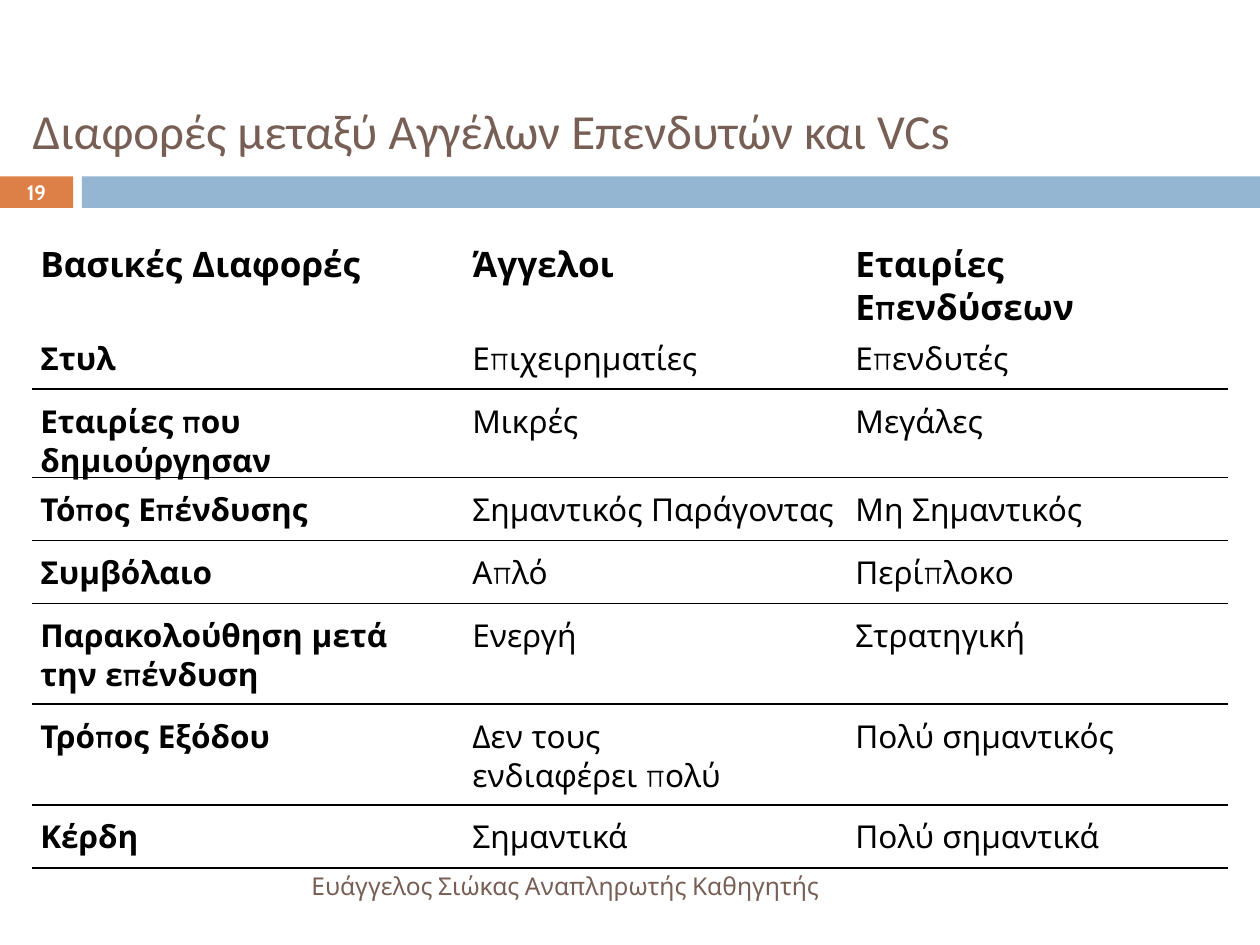
from lxml import etree
from pptx import Presentation
from pptx.dml.color import RGBColor
from pptx.enum.shapes import MSO_SHAPE
from pptx.enum.text import MSO_ANCHOR, PP_ALIGN
from pptx.oxml.ns import qn
from pptx.util import Inches, Pt

RECT = MSO_SHAPE.RECTANGLE
MIDDLE = MSO_ANCHOR.MIDDLE
LEFT, CENTER, RIGHT = PP_ALIGN.LEFT, PP_ALIGN.CENTER, PP_ALIGN.RIGHT
BROWN, BLACK, WHITE = "775F55", "000000", "FFFFFF"


def paint(code):
    return RGBColor.from_string(code)


def write(frame, text, size, font, color, bold=False, align=LEFT):
    frame.word_wrap = True
    para = frame.paragraphs[0]
    para.alignment = align
    run = para.add_run()
    run.text = text
    run.font.size = Pt(size)
    run.font.name = font
    run.font.bold = bold
    run.font.color.rgb = paint(color)


deck = Presentation()
deck.slide_width, deck.slide_height = Inches(10), Inches(7.5)
slide = deck.slides.add_slide(deck.slide_layouts[6])
shapes = slide.shapes

for left, width, color in [(0, 0.58, "DD8047"), (0.65, 9.35, "94B6D2")]:
    bar = shapes.add_shape(RECT, Inches(left), Inches(1.4), Inches(width), Inches(0.25))
    bar.shadow.inherit = False
    bar.fill.solid()
    bar.fill.fore_color.rgb = paint(color)
    bar.line.fill.background()

title = shapes.add_textbox(Inches(0.25), Inches(0.78), Inches(9.5), Inches(0.49)).text_frame
title.margin_left = title.margin_top = Inches(0.01)
title.margin_right = title.margin_bottom = 0
title.vertical_anchor = MIDDLE
write(title, "Διαφορές μεταξύ Αγγέλων Επενδυτών και VCs", 28, "Calibri", BROWN)

rows = [
    ("Βασικές Διαφορές", "Άγγελοι", "Εταιρίες Επενδύσεων"),
    ("Στυλ", "Επιχειρηματίες", "Επενδυτές"),
    ("Εταιρίες που δημιούργησαν", "Μικρές", "Μεγάλες"),
    ("Τόπος Επένδυσης", "Σημαντικός Παράγοντας", "Μη Σημαντικός"),
    ("Συμβόλαιο", "Απλό", "Περίπλοκο"),
    ("Παρακολούθηση μετά την επένδυση", "Ενεργή", "Στρατηγική"),
    ("Τρόπος Εξόδου", "Δεν τους ενδιαφέρει πολύ", "Πολύ σημαντικός"),
    ("Κέρδη", "Σημαντικά", "Πολύ σημαντικά"),
]
widths = [3.38, 3.04, 3.08]
heights = [0.44, 0.5, 0.5, 0.5, 0.5, 0.8, 0.8, 0.5]
insets = {(0, 2): 0.5, (5, 0): 0.4, (6, 1): 0.8}

table = shapes.add_table(len(rows), len(widths), Inches(0.25), Inches(1.92),
                         Inches(sum(widths)), Inches(sum(heights))).table
table.first_row = table.horz_banding = False
for col, width in zip(table.columns, widths):
    col.width = Inches(width)
for row, height in zip(table.rows, heights):
    row.height = Inches(height)

for r, texts in enumerate(rows):
    for c, text in enumerate(texts):
        cell = table.cell(r, c)
        cell.margin_left = Inches(0.12 if c else 0.07)
        cell.margin_top = Inches(0.1 if r else 0)
        cell.margin_right = Inches(insets.get((r, c), 0))
        cell.margin_bottom = 0
        write(cell.text_frame, text, 18 if r else 20, "Quicksand", BLACK,
              bold=r == 0 or c == 0)
        cell.fill.background()
        props = cell._tc.get_or_add_tcPr()
        edges = [("a:lnL", False), ("a:lnR", False), ("a:lnT", r > 1), ("a:lnB", r > 0)]
        for place, (tag, drawn) in enumerate(edges):
            edge = etree.Element(qn(tag), w=str(Pt(1)))
            if drawn:
                fill = etree.SubElement(edge, qn("a:solidFill"))
                etree.SubElement(fill, qn("a:srgbClr"), val=BLACK)
            else:
                etree.SubElement(edge, qn("a:noFill"))
            props.insert(place, edge)

notes = [
    (0.67, 6.83, 5.93, 0.4, "Ευάγγελος Σιώκας Αναπληρωτής Καθηγητής", 14, BROWN, False, RIGHT),
    (0, 1.39, 0.58, 0.27, "19", 11.9, WHITE, True, CENTER),
]
for left, top, width, height, text, size, color, bold, align in notes:
    frame = shapes.add_textbox(Inches(left), Inches(top), Inches(width), Inches(height)).text_frame
    frame.vertical_anchor = MIDDLE
    write(frame, text, size, "Cabin", color, bold=bold, align=align)

deck.save("out.pptx")
